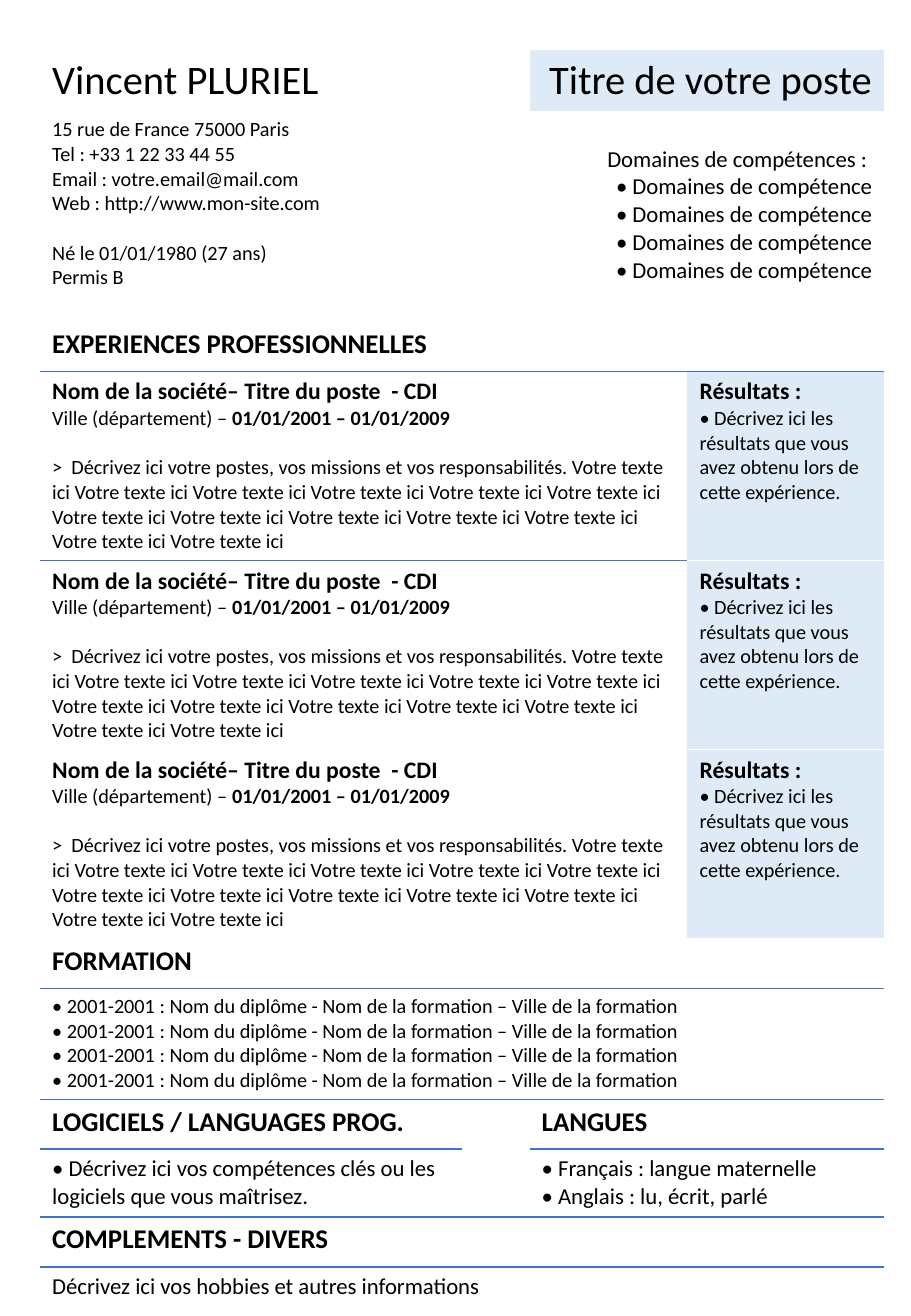
from dataclasses import dataclass

from lxml.etree import SubElement
from pptx import Presentation
from pptx.dml.color import RGBColor
from pptx.enum.text import PP_ALIGN as Align
from pptx.oxml.ns import qn
from pptx.util import Inches, Pt


@dataclass(frozen=True)
class Theme:
    font: str = "Calibri"
    text: str = "000000"
    panel: str = "DEEBF7"
    rule: str = "4472C4"
    gap: str = "FFFFFF"
    rule_width: float = 1
    name: float = 24
    heading: float = 16
    job: float = 14
    large: float = 13.5
    body: float = 12
    line: float = 14.6
    plain_table: str = "{2D5ABB26-0587-4C30-8999-92F81FD0307C}"


def apply_format(target, values):
    for name, value in values.items():
        setattr(target, name, value)


class Resume:
    """Fills a page-wide table; places are given as rows and columns."""

    def __init__(self, presentation, theme, columns, rows):
        self.theme = theme
        self.slide = presentation.slides.add_slide(presentation.slide_layouts[6])
        frame = self.slide.shapes.add_table(
            len(rows), len(columns), 0, 0, Inches(sum(columns)), Inches(sum(rows)))
        self.table = frame.table
        apply_format(self.table, {"first_row": False, "horz_banding": False})
        frame._element.find(".//" + qn("a:tableStyleId")).text = theme.plain_table
        for column, width in zip(self.table.columns, columns):
            column.width = Inches(width)
        for row, height in zip(self.table.rows, rows):
            row.height = Inches(height)
            for cell in row.cells:
                cell.fill.background()

    def border(self, cell, side, color):
        properties = cell._tc.get_or_add_tcPr()
        line = SubElement(properties, qn("a:ln" + side),
                          w=str(Pt(self.theme.rule_width)))
        fill = SubElement(line, qn("a:solidFill"))
        SubElement(fill, qn("a:srgbClr"), val=color)
        # Border lines come before the cell fill
        properties.remove(line)
        position = len(properties.findall(qn("a:lnT")))
        properties.insert(position, line)

    def rule(self, row, first, last, color):
        """Draw the line between a row and the next one."""
        for column in range(first, last + 1):
            self.border(self.table.cell(row, column), "B", color)
            self.border(self.table.cell(row + 1, column), "T", color)

    def cell(self, row, first, last, paragraphs, size, align=Align.LEFT,
             panel=False, top=0.05):
        """Each paragraph is a text or a dict with text, size, bold, before."""
        cell = self.table.cell(row, first)
        if last > first:
            cell.merge(self.table.cell(row, last))
        cell.margin_top = Inches(top)
        if panel:
            cell.fill.solid()
            cell.fill.fore_color.rgb = RGBColor.from_string(self.theme.panel)
        for index, item in enumerate(paragraphs):
            item = item if isinstance(item, dict) else {"text": item}
            frame = cell.text_frame
            paragraph = frame.add_paragraph() if index else frame.paragraphs[0]
            apply_format(paragraph, {"alignment": align,
                                     "space_before": Pt(item.get("before", 0))})
            pieces = [(item["text"], item.get("bold", False))]
            if "strong" in item:
                pieces.append((item["strong"], True))
            for text, bold in pieces:
                run = paragraph.add_run()
                run.text = text
                apply_format(run.font, {"name": self.theme.font, "bold": bold,
                                        "size": Pt(item.get("size", size))})
                run.font.color.rgb = RGBColor.from_string(self.theme.text)

    def heading(self, row, first, last, text):
        self.cell(row, first, last, [{"text": text, "bold": True}], self.theme.heading)
        self.rule(row, first, last, self.theme.rule)

    def experience(self, row):
        theme = self.theme
        filler = " ".join(["Votre texte ici"] * 13)
        self.cell(row, 1, 3, [
            {"text": "Nom de la société– Titre du poste  - CDI",
             "size": theme.job, "bold": True},
            {"text": "Ville (département) – ", "strong": "01/01/2001 – 01/01/2009"},
            {"text": ">  Décrivez ici votre postes, vos missions et vos "
                     "responsabilités. " + filler, "before": theme.line},
        ], theme.body)
        self.cell(row, 4, 4, [
            {"text": "Résultats : ".strip(), "size": theme.job, "bold": True},
            "• Décrivez ici les résultats que vous avez obtenu lors de cette expérience.",
        ], theme.body, panel=True)


def main():
    theme = Theme()
    presentation = Presentation()
    apply_format(presentation, {"slide_width": Inches(7.5),
                                "slide_height": Inches(10.83)})
    band, job = 0.41, 1.55
    resume = Resume(
        presentation, theme,
        columns=[0.33, 3.47, 0.56, 1.3, 1.62, 0.23],
        rows=[band, 0.5, 1.73, band, job, job, job, band, 0.91, band, 0.56, band, band])

    # Name and position
    resume.cell(1, 1, 2, ["Vincent PLURIEL"], theme.name)
    resume.cell(1, 3, 4, ["Titre de votre poste"], theme.name, Align.RIGHT, panel=True)

    # Contact details and skills
    resume.cell(2, 1, 2, [
        "15 rue de France 75000 Paris",
        "Tel : +33 1 22 33 44 55",
        "Email : votre.email@mail.com",
        "Web : http://www.mon-site.com",
        {"text": "Né le 01/01/1980 (27 ans)", "before": theme.line},
        "Permis B",
    ], theme.body)
    resume.cell(2, 3, 4, ["Domaines de compétences : "]
                + ["• Domaines de compétence"] * 4,
                theme.large, Align.RIGHT, top=0.28)

    # Work experience
    resume.heading(3, 1, 4, "EXPERIENCES PROFESSIONNELLES")
    for row in (4, 5, 6):
        resume.experience(row)
        if row < 6:
            resume.rule(row, 4, 4, theme.gap)

    # Education
    resume.heading(7, 1, 4, "FORMATION")
    resume.cell(8, 1, 4, ["• 2001-2001 : Nom du diplôme - Nom de la formation – "
                          "Ville de la formation"] * 4, theme.body)

    # Software and languages
    resume.heading(9, 1, 1, "LOGICIELS / LANGUAGES PROG.")
    resume.cell(10, 1, 1, ["• Décrivez ici vos compétences clés ou les logiciels "
                           "que vous maîtrisez."], theme.large)
    resume.heading(9, 3, 4, "LANGUES")
    resume.cell(10, 3, 4, ["• Français : langue maternelle",
                           "• Anglais : lu, écrit, parlé"], theme.large)

    # Other information
    resume.heading(11, 1, 4, "COMPLEMENTS - DIVERS")
    resume.cell(12, 1, 4, ["Décrivez ici vos hobbies et autres informations"],
                theme.large)

    presentation.save("out.pptx")


if __name__ == "__main__":
    main()
